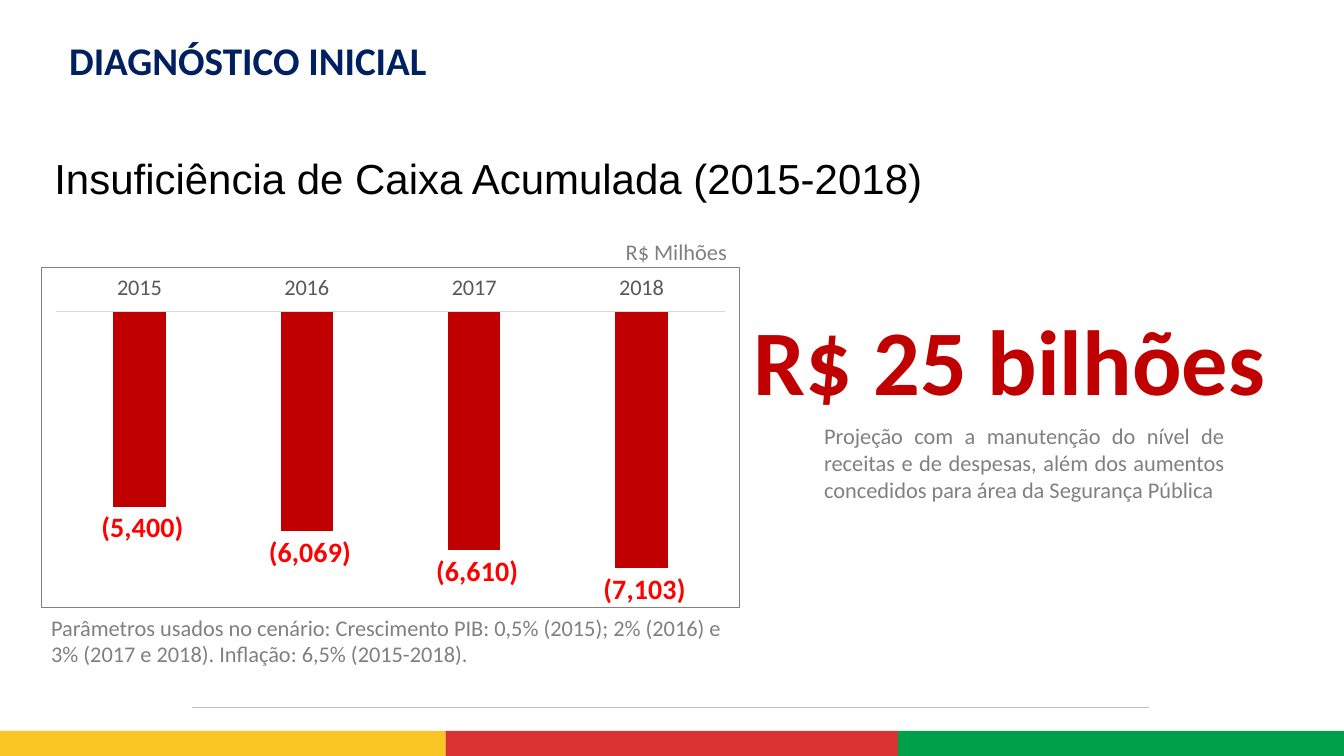
from dataclasses import dataclass

from lxml import etree
from pptx import Presentation
from pptx import util as u
from pptx.chart.data import CategoryChartData
from pptx.dml.color import RGBColor
from pptx.enum import chart as charts, shapes, text
from pptx.oxml import parse_xml
from pptx.oxml.ns import nsdecls, qn
from pptx.util import Cm, Pt


@dataclass(frozen=True)
class Theme:
    font: str = "Calibri"
    heading_font: str = "Arial"
    navy: str = "002060"
    black: str = "000000"
    gray: str = "808080"
    axis_text: str = "595959"
    axis_line: str = "D9D9D9"
    rule: str = "BFBFBF"
    dark_red: str = "C00000"
    label_red: str = "FF0000"
    yellow: str = "F9C623"
    red: str = "DA3233"
    green: str = "009F49"
    note_size: int = 16
    label_size: int = 20
    title_size: int = 28
    heading_size: int = 30
    figure_size: int = 66


THEME = Theme()
SLIDE_WIDTH, SLIDE_HEIGHT = Cm(33.87), Cm(19.05)
SHORTFALL = {"2015": -5400, "2016": -6069, "2017": -6610, "2018": -7103}
NUMBER_FORMAT = '_(* #,##0_);_(* \\(#,##0\\);_(* "-"??_);_('


def style_font(font, size, color, bold=False, name=THEME.font):
    font.name = name
    font.size = Pt(size)
    font.bold = bold
    font.color.rgb = RGBColor.from_string(color)


def add_text(slide, box, content, size, color, bold=False, name=THEME.font,
             alignment=text.PP_ALIGN.LEFT, margins=True):
    shape = slide.shapes.add_textbox(*(Cm(length) for length in box))
    frame = shape.text_frame
    frame.word_wrap = True
    if not margins:
        frame.margin_left = frame.margin_right = 0
        frame.margin_top = frame.margin_bottom = 0
    frame.text = content
    paragraph = frame.paragraphs[0]
    paragraph.alignment = alignment
    style_font(paragraph.runs[0].font, size, color, bold, name)


def add_footer_bands(slide):
    """Fill the bottom edge with three adjoining colour bands."""
    edges = [0, Cm(11.23), Cm(22.63), SLIDE_WIDTH]
    top = Cm(18.42)
    for left, right, color in zip(edges, edges[1:],
                                  (THEME.yellow, THEME.red, THEME.green)):
        band = slide.shapes.add_shape(shapes.MSO_SHAPE.RECTANGLE, left, top,
                                      right - left, SLIDE_HEIGHT - top)
        band.shadow.inherit = False
        band.fill.solid()
        band.fill.fore_color.rgb = RGBColor.from_string(color)
        band.line.fill.background()


def add_rule(slide, left, right, top):
    rule = slide.shapes.add_connector(shapes.MSO_CONNECTOR.STRAIGHT,
                                      Cm(left), Cm(top), Cm(right), Cm(top))
    rule.line.color.rgb = RGBColor.from_string(THEME.rule)
    rule.line.width = Pt(0.5)
    properties = rule.element.find(qn("p:spPr"))
    etree.SubElement(properties, qn("a:effectLst"))


def frame_chart(chart):
    """Outline the chart area and fix the inner plot area."""
    border = parse_xml(
        f'<c:spPr {nsdecls("c", "a")}><a:noFill/><a:ln w="{Pt(0.75)}">'
        f'<a:solidFill><a:srgbClr val="{THEME.gray}"/></a:solidFill>'
        '</a:ln></c:spPr>')
    chart.element.find(qn("c:chart")).addnext(border)
    plot_area = chart.element.find(qn("c:chart")).find(qn("c:plotArea"))
    for old_layout in plot_area.findall(qn("c:layout")):
        plot_area.remove(old_layout)
    places = "".join(f'<c:{key} val="{value}"/>' for key, value in (
        ("layoutTarget", "inner"), ("xMode", "edge"), ("yMode", "edge"),
        ("x", 0.02), ("y", 0.13), ("w", 0.96), ("h", 0.85)))
    plot_area.insert(0, parse_xml(
        f'<c:layout {nsdecls("c")}><c:manualLayout>{places}'
        '</c:manualLayout></c:layout>'))


def add_shortfall_chart(slide, box):
    data = CategoryChartData(number_format=NUMBER_FORMAT)
    data.categories = list(SHORTFALL)
    data.add_series("Insuficiência de Caixa", list(SHORTFALL.values()))
    chart = slide.shapes.add_chart(charts.XL_CHART_TYPE.COLUMN_CLUSTERED,
                                   *(Cm(length) for length in box), data).chart
    chart.has_legend = False
    chart.has_title = False
    style_font(chart.font, 10, THEME.black)

    years = chart.category_axis
    years.major_tick_mark = years.minor_tick_mark = charts.XL_TICK_MARK.NONE
    years.tick_label_position = charts.XL_TICK_LABEL_POSITION.HIGH
    style_font(years.tick_labels.font, THEME.note_size, THEME.axis_text)
    years.format.line.color.rgb = RGBColor.from_string(THEME.axis_line)
    years.format.line.width = Pt(0.75)

    amounts = chart.value_axis
    amounts.minimum_scale, amounts.maximum_scale = -8000, 0
    amounts.has_major_gridlines = False
    amounts.visible = False

    plot = chart.plots[0]
    plot.vary_by_categories = False
    plot.gap_width, plot.overlap = 219, -27
    series = plot.series[0]
    series.invert_if_negative = False
    series.format.fill.solid()
    series.format.fill.fore_color.rgb = RGBColor.from_string(THEME.dark_red)
    labels = series.data_labels
    labels.show_value = True
    labels.number_format = NUMBER_FORMAT
    labels.number_format_is_linked = False
    labels.position = charts.XL_LABEL_POSITION.OUTSIDE_END
    style_font(labels.font, THEME.label_size, THEME.label_red, bold=True)
    frame_chart(chart)


def main():
    presentation = Presentation()
    presentation.slide_width = u.Emu(SLIDE_WIDTH)
    presentation.slide_height = u.Emu(SLIDE_HEIGHT)
    slide = presentation.slides.add_slide(presentation.slide_layouts[6])

    add_footer_bands(slide)
    add_text(slide, (0.76, 0.91, 10.97, 1.19), "DIAGNÓSTICO INICIAL",
             THEME.title_size, THEME.navy, bold=True,
             alignment=text.PP_ALIGN.CENTER, margins=False)
    add_rule(slide, 4.83, 28.96, 17.83)
    add_text(slide, (20.52, 10.52, 10.59, 2.31),
             "Projeção com a manutenção do nível de receitas e de despesas, "
             "além dos aumentos concedidos para área da Segurança Pública",
             THEME.note_size, THEME.gray, alignment=text.PP_ALIGN.JUSTIFY)
    add_text(slide, (1.12, 3.73, 25.65, 1.55),
             "Insuficiência de Caixa Acumulada (2015-2018)",
             THEME.heading_size, THEME.black, name=THEME.heading_font)
    add_text(slide, (18.75, 7.52, 14.99, 3.07), "R$ 25 bilhões",
             THEME.figure_size, THEME.dark_red, bold=True)
    add_shortfall_chart(slide, (1.04, 6.73, 17.6, 8.59))
    add_text(slide, (1.04, 15.34, 18.11, 1.63),
             "Parâmetros usados no cenário: Crescimento PIB: 0,5% (2015); "
             "2% (2016) e 3% (2017 e 2018). Inflação: 6,5% (2015-2018).",
             THEME.note_size, THEME.gray)
    add_text(slide, (15.52, 5.87, 3.2, 0.94), "R$ Milhões",
             THEME.note_size, THEME.gray)

    presentation.save("out.pptx")


if __name__ == "__main__":
    main()
